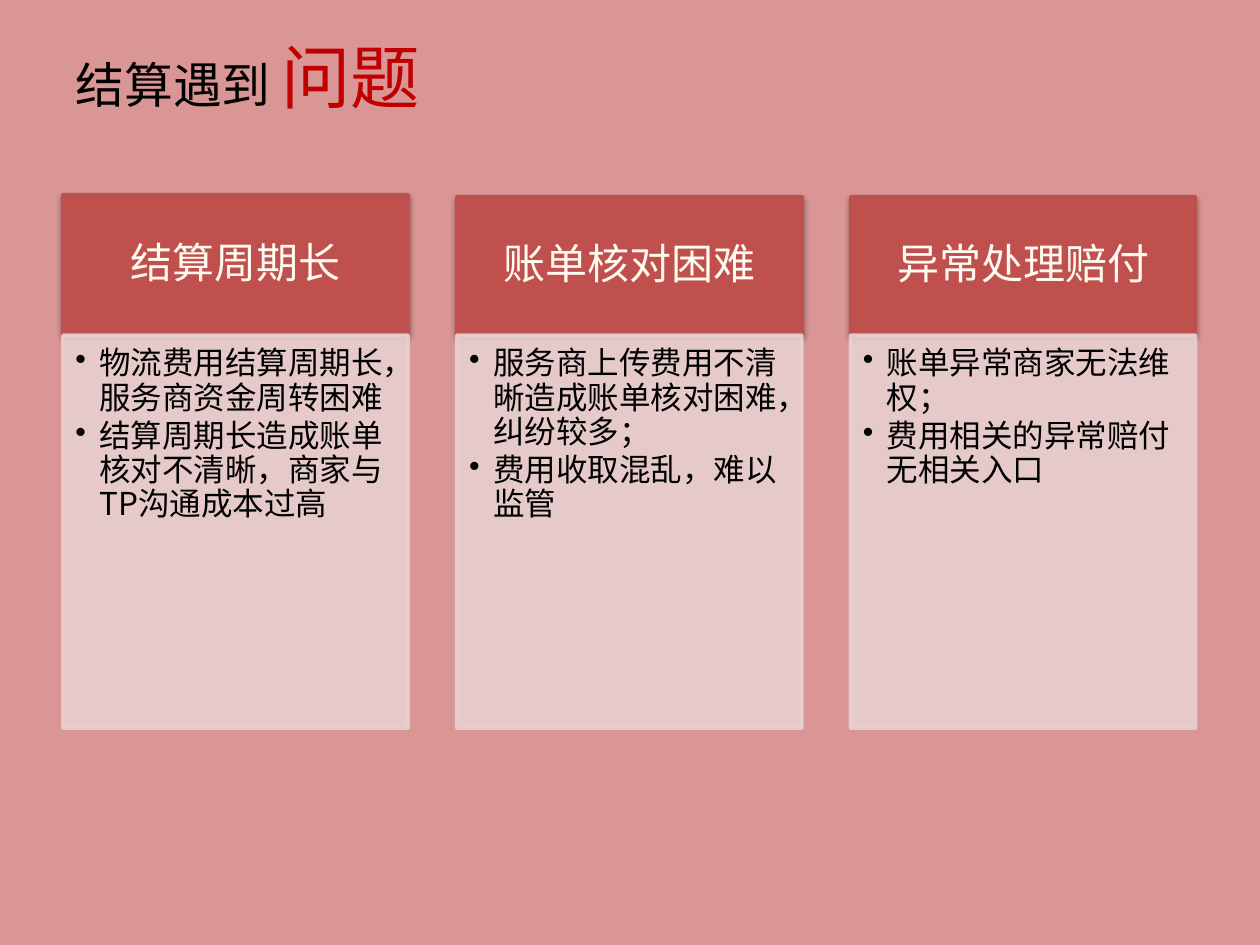
import pptx
import pptx.dml.color
import pptx.enum.shapes
import pptx.enum.text
import pptx.oxml
import pptx.oxml.ns
import pptx.util
from pptx.util import Inches

FONT = "Noto Sans CJK SC"
COLORS = {
    "background": "D99694",
    "header": "C0504D",
    "body": "E8D0D0",
    "text": "000000",
    "header_text": "FFFBF0",
    "accent": "C00000",
}
COLUMNS = [
    ("结算周期长", 1.55, ["物流费用结算周期长，服务商资金周转困难",
                     "结算周期长造成账单核对不清晰，商家与TP沟通成本过高"]),
    ("账单核对困难", 1.56, ["服务商上传费用不清晰造成账单核对困难，纠纷较多；",
                      "费用收取混乱，难以监管"]),
    ("异常处理赔付", 1.56, ["账单异常商家无法维权；",
                      "费用相关的异常赔付无相关入口"]),
]
COLUMN_LEFT, COLUMN_PITCH, COLUMN_WIDTH = 0.5, 3.125, 2.74
HEADER_HEIGHT = 1.1
BODY_TOP, BODY_HEIGHT = 2.66, 3.12


def rgb(name):
    return pptx.dml.color.RGBColor.from_string(COLORS[name])


def add_xml(parent, tag, **attributes):
    element = pptx.oxml.parse_xml(f"<a:{tag} {pptx.oxml.ns.nsdecls('a')}/>")
    for key, value in attributes.items():
        element.set(key, str(value))
    parent.append(element)
    return element


def format_span(span, size, color):
    span.font.size = pptx.util.Pt(size)
    span.font.name = FONT
    span.font.color.rgb = rgb(color)
    add_xml(span.font._element, "ea", typeface=FONT)


def add_title(page):
    title = page.shapes.title
    title.left, title.top = Inches(0.5), Inches(0.52)
    title.width, title.height = Inches(9), Inches(0.63)
    frame = title.text_frame
    frame.auto_size = pptx.enum.text.MSO_AUTO_SIZE.NONE
    frame.vertical_anchor = pptx.enum.text.MSO_ANCHOR.MIDDLE
    paragraph = frame.paragraphs[0]
    paragraph.alignment = pptx.enum.text.PP_ALIGN.LEFT
    for text, size, color in [("结算遇到 ", 27.9, "text"), ("问题", 39.6, "accent")]:
        span = paragraph.add_run()
        span.text = text
        format_span(span, size, color)
    # The title ends with a line break, which lifts its visible line
    paragraph.add_line_break()
    add_xml(paragraph._p, "endParaRPr", sz=2790)


def add_panel(page, left, top, height, color, insets):
    box = page.shapes.add_shape(
        pptx.enum.shapes.MSO_SHAPE.RECTANGLE,
        Inches(left), Inches(top), Inches(COLUMN_WIDTH), Inches(height))
    box.shadow.inherit = False
    box.fill.solid()
    box.fill.fore_color.rgb = rgb(color)
    box.line.color.rgb = rgb(color)
    box.line.width = pptx.util.Pt(2)
    frame = box.text_frame
    frame.word_wrap = True
    (frame.margin_left, frame.margin_top,
     frame.margin_right, frame.margin_bottom) = map(Inches, insets)
    return box


def add_header(page, left, top, text):
    box = add_panel(page, left, top, HEADER_HEIGHT, "header", (0.19, 0.11, 0.19, 0.11))
    # Soft shadow below the header
    effects = box._element.spPr.find(pptx.oxml.ns.qn("a:effectLst"))
    shadow = add_xml(effects, "outerShdw", blurRad=pptx.util.Pt(3.1),
                     dist=pptx.util.Pt(1.6), dir=5400000, rotWithShape=0)
    add_xml(add_xml(shadow, "srgbClr", val=COLORS["text"]), "alpha", val=38000)
    box.text_frame.text = text
    box.text_frame.vertical_anchor = pptx.enum.text.MSO_ANCHOR.MIDDLE
    paragraph = box.text_frame.paragraphs[0]
    paragraph.alignment = pptx.enum.text.PP_ALIGN.CENTER
    paragraph.line_spacing = 0.9
    format_span(paragraph.runs[0], 24, "header_text")


def add_bullets(page, left, items):
    box = add_panel(page, left, BODY_TOP, BODY_HEIGHT, "body", (0.1, 0.1, 0.14, 0.16))
    # Fill and outline are slightly transparent
    for color in box._element.spPr.iter(pptx.oxml.ns.qn("a:srgbClr")):
        add_xml(color, "alpha", val=90000)
    frame = box.text_frame
    frame.vertical_anchor = pptx.enum.text.MSO_ANCHOR.TOP
    frame.text = "\n".join(items)
    for paragraph in frame.paragraphs:
        paragraph.alignment = pptx.enum.text.PP_ALIGN.LEFT
        paragraph.level = 1
        properties = paragraph._p.get_or_add_pPr()
        properties.set("marL", str(Inches(0.19)))
        properties.set("indent", str(Inches(-0.19)))
        add_xml(properties, "buChar", char="•")
        paragraph.line_spacing = 0.9
        paragraph.space_after = pptx.util.Pt(2.7)
        format_span(paragraph.runs[0], 18, "text")


def main():
    deck = pptx.Presentation()
    deck.slide_width, deck.slide_height = Inches(10), Inches(7.5)
    page = deck.slides.add_slide(deck.slide_layouts[5])
    page.background.fill.solid()
    page.background.fill.fore_color.rgb = rgb("background")

    add_title(page)
    # Three columns, each a header above a list
    for index, (heading, top, items) in enumerate(COLUMNS):
        left = COLUMN_LEFT + index * COLUMN_PITCH
        add_header(page, left, top, heading)
        add_bullets(page, left, items)

    deck.save("out.pptx")


if __name__ == "__main__":
    main()
